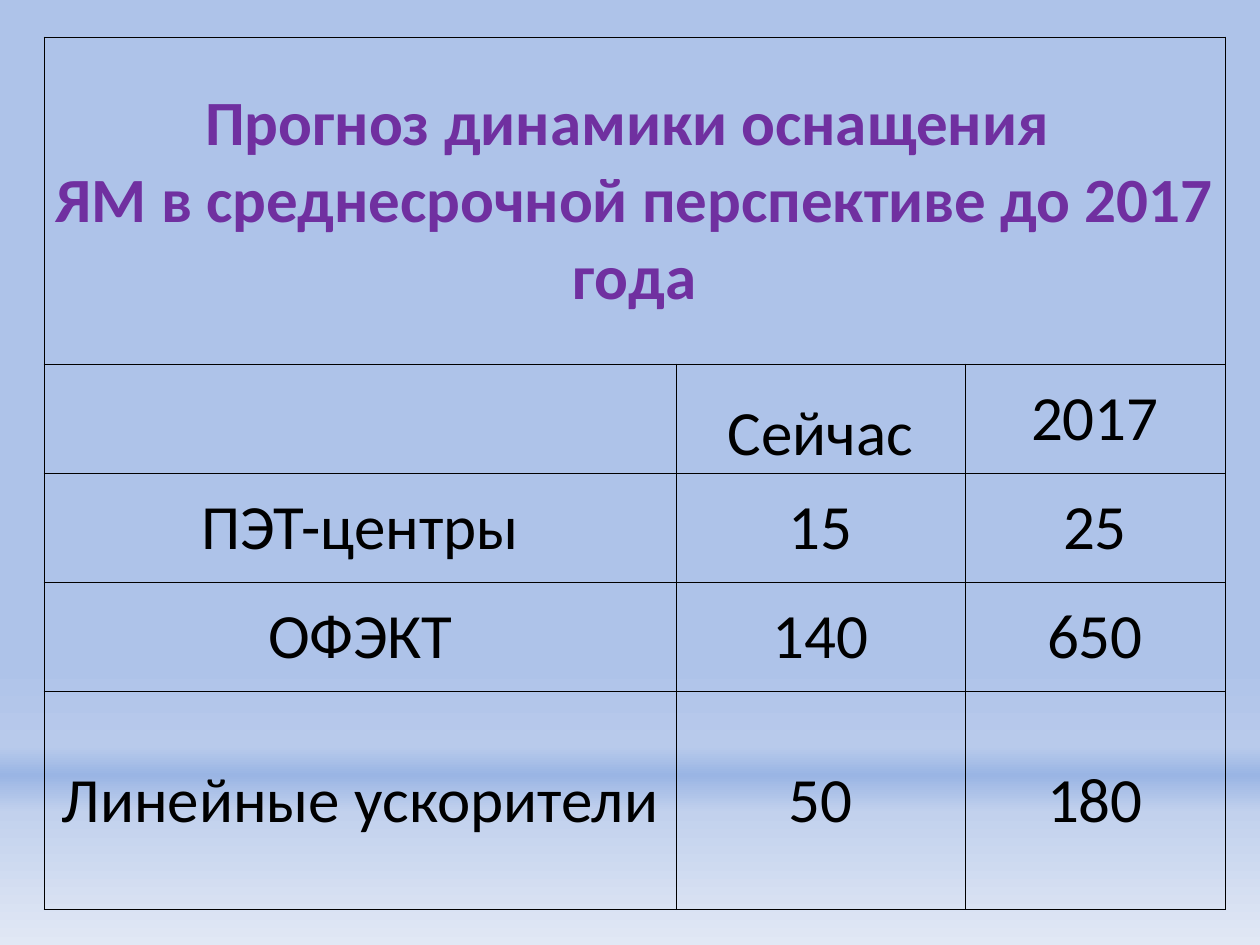
from dataclasses import dataclass

from lxml.etree import SubElement as Sub
from pptx import Presentation
from pptx.dml.color import RGBColor as RGB
from pptx.enum.text import MSO_ANCHOR as Anchor, PP_ALIGN as Align
from pptx.oxml.ns import qn
from pptx.util import Emu, Pt

TITLE = "Прогноз динамики оснащения \nЯМ в среднесрочной перспективе до 2017 года"
ROWS = [
    ("", "Сейчас", "2017"),
    ("ПЭТ-центры", "15", "25"),
    ("ОФЭКТ", "140", "650"),
    ("Линейные ускорители", "50", "180"),
]
LEFT, TOP = 44, 37
COLS = [632, 289, 260]
HEIGHTS = [327, 109, 109, 109, 219]


@dataclass(frozen=True)
class Theme:
    font: str = "Calibri"
    size: int = 36
    title: str = "7030A0"
    text: str = "000000"
    rule: str = "000000"
    rule_pt: float = 0.5
    sky: tuple = ((70, "AEC3E9"), (79, "B8CAEB"), (82, "9AB5E4"),
                  (86, "C2D1ED"), (100, "E1E8F5"))


THEME = Theme()


def px(n):
    return Emu(n * 914400 // 126)


def paint_sky(slide):
    fill = slide.background.fill
    fill.gradient()
    fill.gradient_angle = 270
    stops = slide.element.find(".//" + qn("a:gsLst"))
    for stop in list(stops):
        stops.remove(stop)
    for pos, color in THEME.sky:
        stop = Sub(stops, qn("a:gs"), pos=str(pos * 1000))
        Sub(stop, qn("a:srgbClr"), val=color)


def rule_cell(cell):
    """Draw a thin line on all four sides of the cell."""
    props = cell._tc.get_or_add_tcPr()
    for side in ("lnL", "lnR", "lnT", "lnB"):
        line = Sub(props, qn("a:" + side), w=str(Pt(THEME.rule_pt)))
        Sub(Sub(line, qn("a:solidFill")), qn("a:srgbClr"), val=THEME.rule)


def fill_cell(cell, text, color, bold=False, anchor=Anchor.MIDDLE):
    cell.text = text
    cell.vertical_anchor = anchor
    cell.margin_left = cell.margin_right = cell.margin_top = px(1)
    cell.margin_bottom = 0
    for para in cell.text_frame.paragraphs:
        para.alignment = Align.CENTER
        font = para.font
        font.name, font.size, font.bold = THEME.font, Pt(THEME.size), bold
        font.color.rgb = RGB.from_string(color)


def add_grid(slide):
    table = slide.shapes.add_table(
        len(HEIGHTS), len(COLS), px(LEFT), px(TOP),
        px(sum(COLS)), px(sum(HEIGHTS))).table
    table.first_row = table.horz_banding = False
    for col, width in zip(table.columns, COLS):
        col.width = px(width)
    for row, height in zip(table.rows, HEIGHTS):
        row.height = px(height)
    for cell in table.iter_cells():
        rule_cell(cell)
        cell.fill.background()

    head = table.cell(0, 0)
    head.merge(table.cell(0, len(COLS) - 1))
    fill_cell(head, TITLE, THEME.title, bold=True)
    for r, row in enumerate(ROWS, 1):
        for c, text in enumerate(row):
            anchor = Anchor.BOTTOM if (r, c) == (1, 1) else Anchor.MIDDLE
            fill_cell(table.cell(r, c), text, THEME.text, anchor=anchor)


def main():
    deck = Presentation()
    deck.slide_width, deck.slide_height = px(1260), px(945)
    slide = deck.slides.add_slide(deck.slide_layouts[6])
    paint_sky(slide)
    add_grid(slide)
    deck.save("out.pptx")


if __name__ == "__main__":
    main()
